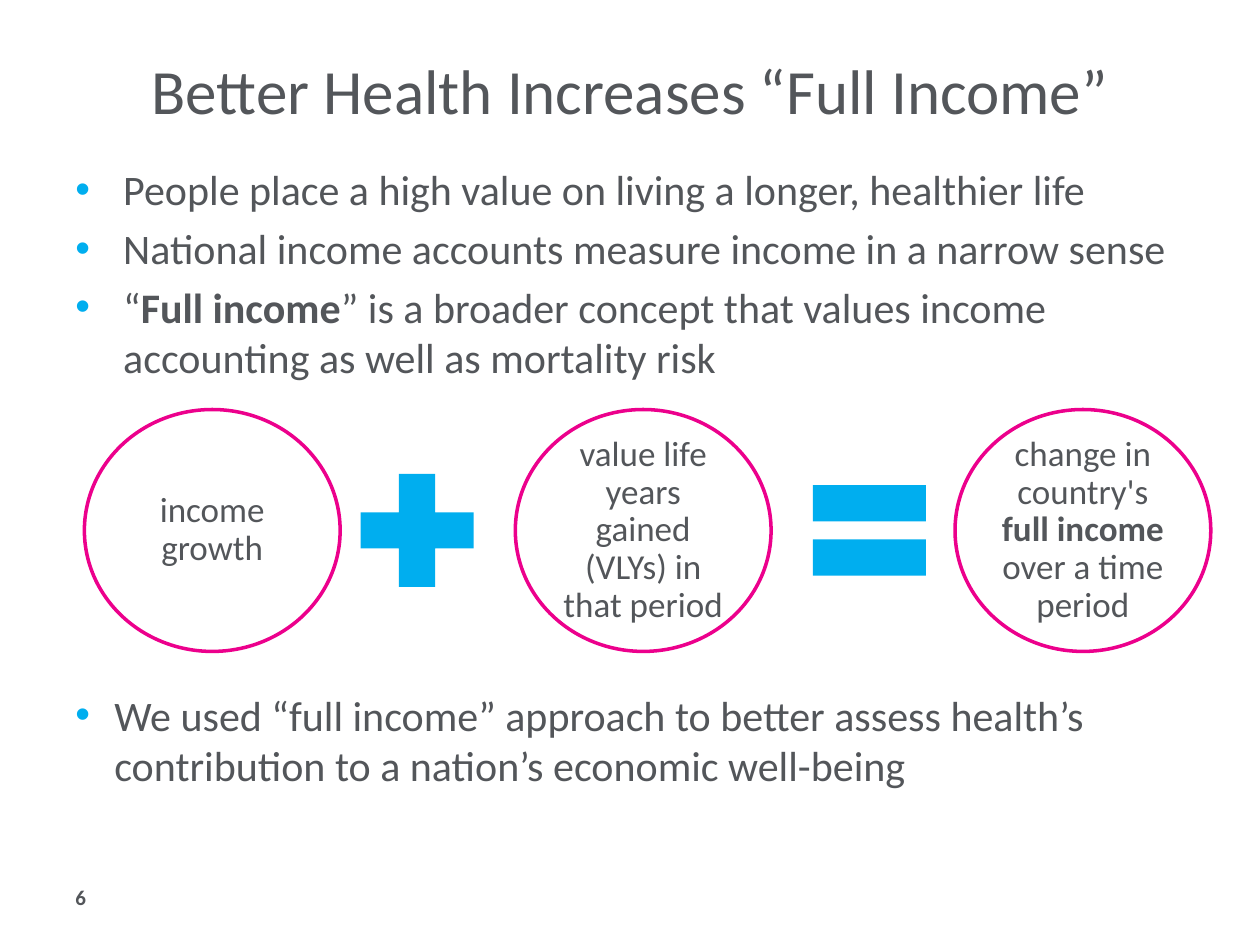
from dataclasses import dataclass

import pptx
import pptx.dml.color
import pptx.enum.shapes
import pptx.enum.text
import pptx.util
from lxml import etree
from pptx.util import Inches

ALIGN = pptx.enum.text.PP_ALIGN
ANCHOR = pptx.enum.text.MSO_ANCHOR
SHAPE = pptx.enum.shapes.MSO_SHAPE


@dataclass(frozen=True)
class Theme:
    font: str = "Calibri"
    text: str = "53565A"
    accent: str = "00AEEF"
    outline: str = "EC008C"
    paper: str = "FFFFFF"
    title_size: int = 36
    body_size: int = 24
    circle_size: int = 20
    number_size: int = 12


def rgb(value):
    return pptx.dml.color.RGBColor.from_string(value)


class PageBuilder:
    def __init__(self, page, theme):
        self.page = page
        self.theme = theme

    def add_spans(self, para, spans, size):
        """Add (text, bold) pairs as runs."""
        for text, bold in spans:
            span = para.add_run()
            span.text = text
            span.font.name = self.theme.font
            span.font.size = pptx.util.Pt(size)
            span.font.bold = bold
            span.font.color.rgb = rgb(self.theme.text)

    def text_box(self, left, top, width, height, anchor=ANCHOR.TOP):
        box = self.page.shapes.add_textbox(
            Inches(left), Inches(top), Inches(width), Inches(height))
        box.text_frame.word_wrap = True
        box.text_frame.vertical_anchor = anchor
        return box.text_frame

    def line(self, left, top, width, height, text, size, bold=False, align=ALIGN.LEFT):
        para = self.text_box(left, top, width, height, ANCHOR.MIDDLE).paragraphs[0]
        para.alignment = align
        self.add_spans(para, [(text, bold)], size)

    def bullets(self, left, top, width, height, items, indent):
        frame = self.text_box(left, top, width, height)
        for index, spans in enumerate(items):
            para = frame.add_paragraph() if index else frame.paragraphs[0]
            self.add_bullet(para, indent)
            if index:
                para.space_before = pptx.util.Pt(0.2 * self.theme.body_size)
            self.add_spans(para, spans, self.theme.body_size)

    def add_bullet(self, para, indent):
        props = para._p.get_or_add_pPr()
        props.set("marL", str(Inches(indent)))
        props.set("indent", str(-Inches(indent)))
        tag = pptx.oxml.ns.qn
        colour = etree.SubElement(props, tag("a:buClr"))
        etree.SubElement(colour, tag("a:srgbClr"), val=self.theme.accent)
        etree.SubElement(props, tag("a:buFont"), typeface="Arial")
        etree.SubElement(props, tag("a:buChar"), char="•")

    def shape(self, kind, left, top, width, height, fill):
        shape = self.page.shapes.add_shape(
            kind, Inches(left), Inches(top), Inches(width), Inches(height))
        shape.shadow.inherit = False
        shape.fill.solid()
        shape.fill.fore_color.rgb = rgb(fill)
        shape.line.fill.background()
        return shape

    def circle(self, left, spans):
        circle = self.shape(SHAPE.OVAL, left, 3.25, 2.03, 1.92, self.theme.paper)
        circle.line.color.rgb = rgb(self.theme.outline)
        circle.line.width = pptx.util.Pt(2)
        frame = circle.text_frame
        frame.word_wrap = True
        frame.vertical_anchor = ANCHOR.MIDDLE
        frame.margin_left = frame.margin_right = Inches(0.03)
        frame.margin_top = frame.margin_bottom = Inches(0.03)
        para = frame.paragraphs[0]
        para.alignment = ALIGN.CENTER
        para.line_spacing = 0.9
        self.add_spans(para, spans, self.theme.circle_size)

    def operator(self, kind, left):
        self.shape(kind, left, 3.6, 1.22, 1.22, self.theme.accent)


def main():
    deck = pptx.Presentation()
    deck.slide_width, deck.slide_height = Inches(10), Inches(7.5)
    theme = Theme()
    builder = PageBuilder(deck.slides.add_slide(deck.slide_layouts[6]), theme)

    builder.line(0.5, 0.17, 9, 1.08, "Better Health Increases “Full Income”",
                 theme.title_size, align=ALIGN.CENTER)
    builder.bullets(0.5, 1.25, 9, 2, [
        [("People place a high value on living a longer, healthier life", False)],
        [("National income accounts measure income in a narrow sense", False)],
        [("“", False), ("Full income", True),
         ("” is a broader concept that values income accounting "
          "as well as mortality risk", False)],
    ], indent=0.38)

    builder.circle(0.67, [("income growth", False)])
    builder.operator(SHAPE.MATH_PLUS, 2.7)
    builder.circle(4.09, [("value life years gained (VLYs) in that period", False)])
    builder.operator(SHAPE.MATH_EQUAL, 6.29)
    builder.circle(7.58, [("change in country's ", False), ("full income ", True),
                          ("over a time period", False)])

    builder.bullets(0.5, 5.42, 9, 1, [
        [("We used “full income” approach to better assess health’s "
          "contribution to a nation’s economic well-being", False)],
    ], indent=0.31)
    builder.line(0.5, 6.92, 2.33, 0.4, "6", theme.number_size, bold=True)

    deck.save("out.pptx")


if __name__ == "__main__":
    main()
